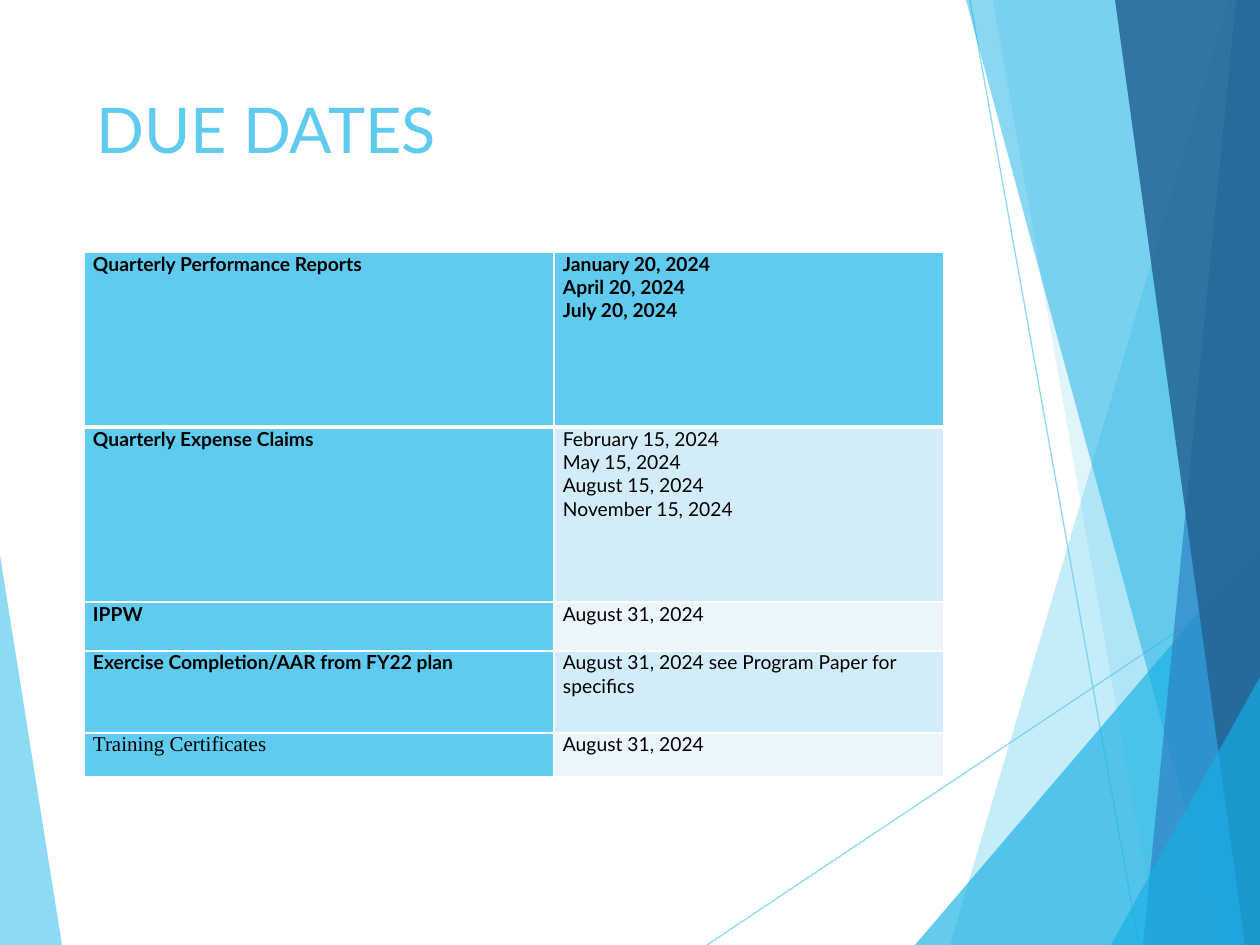
from lxml.etree import SubElement as Sub
from pptx import Presentation
from pptx.dml.color import RGBColor as RGB
from pptx.enum.shapes import MSO_CONNECTOR as Link
from pptx.enum.text import MSO_ANCHOR as Anchor, MSO_AUTO_SIZE as Auto, PP_ALIGN as Align
from pptx.oxml.ns import qn
from pptx.util import Emu, Pt

W, H = 1260, 945
SCALE = 914400 / 126
SKY, CYAN, BLUE, NAVY = "5FCBEF", "17B0E4", "2E83C3", "226292"
PALE, MIST, WHITE, BLACK = "D2ECF9", "EAF6FC", "FFFFFF", "000000"

COLS = [470, 390]
ROWS = [
    (175, "Quarterly Performance Reports",
     ["January 20, 2024", "April 20, 2024", "July 20, 2024"]),
    (175, "Quarterly Expense Claims",
     ["February 15, 2024", "May 15, 2024", "August 15, 2024", "November 15, 2024"]),
    (49, "IPPW", ["August 31, 2024"]),
    (82, "Exercise Completion/AAR from FY22 plan",
     ["August 31, 2024 see Program Paper for specifics"]),
    (44, "Training Certificates", ["August 31, 2024"]),
]


def px(n):
    return Emu(round(n * SCALE))


def paint(fill, color, alpha=100):
    fill.solid()
    fill.fore_color.rgb = RGB.from_string(color)
    if alpha < 100:
        tone = fill._xPr.find(qn("a:solidFill"))[0]
        Sub(tone, qn("a:alpha"), val=str(alpha * 1000))


def add_run(para, text, size, color, font="Lato", bold=False):
    run = para.add_run()
    run.text = text
    run.font.size = Pt(size)
    run.font.name = font
    run.font.bold = bold
    run.font.color.rgb = RGB.from_string(color)


# Backdrop pieces
def add_pane(slide, points, color, alpha):
    pen = slide.shapes.build_freeform(*points[0], scale=SCALE)
    pen.add_line_segments(points[1:], close=True)
    pane = pen.convert_to_shape()
    pane.shadow.inherit = False
    pane.line.fill.background()
    paint(pane.fill, color, alpha)


def add_band(slide, top, foot, color, alpha):
    add_pane(slide, [(top, 0), (foot, H), (W, H), (W, 0)], color, alpha)


def add_wedge(slide, edge, foot, peak, color, alpha):
    add_pane(slide, [(foot, H), (edge, peak), (edge, H)], color, alpha)


def add_line(slide, x1, y1, x2, y2):
    line = slide.shapes.add_connector(Link.STRAIGHT, px(x1), px(y1), px(x2), px(y2))
    line.line.width = Pt(0.75)
    paint(line.line.fill, SKY, 70)
    Sub(line._element.spPr, qn("a:effectLst"))


def add_back(slide):
    add_wedge(slide, 0, 62, 555, SKY, 70)
    add_line(slide, 707, H, W, 576)
    add_line(slide, 970, 0, 1139, H)
    add_band(slide, 1229, 950, SKY, 36)
    add_band(slide, 993, 1158, SKY, 20)
    add_wedge(slide, W, 915, 541, CYAN, 66)
    add_band(slide, 966, 1222, CYAN, 50)
    add_band(slide, 1236, 1143, BLUE, 70)
    add_band(slide, 1115, 1245, NAVY, 82)
    add_wedge(slide, W, 1111, 677, CYAN, 66)


# Title
def set_title(slide, text):
    title = slide.shapes.title
    title.left, title.top, title.width, title.height = map(px, (84, 84, 875, 181))
    frame = title.text_frame
    frame.auto_size = Auto.NONE
    frame.word_wrap = True
    frame.vertical_anchor = Anchor.TOP
    para = frame.paragraphs[0]
    para.alignment = Align.LEFT
    add_run(para, text, 36, SKY)


# Table
def add_edge(cell, side, width):
    edge = Sub(cell._tc.get_or_add_tcPr(), qn("a:ln" + side), w=str(Pt(width)))
    Sub(Sub(edge, qn("a:solidFill")), qn("a:srgbClr"), val=WHITE)


def fill_cell(cell, lines, color, row, **style):
    cell.margin_left = cell.margin_right = px(9)
    cell.margin_top = cell.margin_bottom = 0
    thick = {(0, "B"), (1, "T")}
    for side in "LRTB":
        add_edge(cell, side, 3 if (row, side) in thick else 1)
    paint(cell.fill, color)
    frame = cell.text_frame
    for i, text in enumerate(lines):
        para = frame.add_paragraph() if i else frame.paragraphs[0]
        add_run(para, text, color=BLACK, **style)


def add_dates(slide):
    high = sum(row[0] for row in ROWS)
    grid = slide.shapes.add_table(len(ROWS), len(COLS), px(84), px(252),
                                  px(sum(COLS)), px(high)).table
    for col, wide in zip(grid.columns, COLS):
        col.width = px(wide)
    for i, (tall, task, dates) in enumerate(ROWS):
        grid.rows[i].height = px(tall)
        if i == len(ROWS) - 1:
            style = dict(size=12, font="Times New Roman")
        else:
            style = dict(size=11, bold=True)
        fill_cell(grid.cell(i, 0), [task], SKY, i, **style)
        shade = SKY if i == 0 else PALE if i % 2 else MIST
        fill_cell(grid.cell(i, 1), dates, shade, i, size=11, bold=i == 0)


def main():
    deck = Presentation()
    deck.slide_width, deck.slide_height = px(W), px(H)
    slide = deck.slides.add_slide(deck.slide_layouts[5])
    paint(slide.background.fill, WHITE)
    add_back(slide)
    set_title(slide, "DUE DATES")
    add_dates(slide)
    deck.save("out.pptx")


if __name__ == "__main__":
    main()
